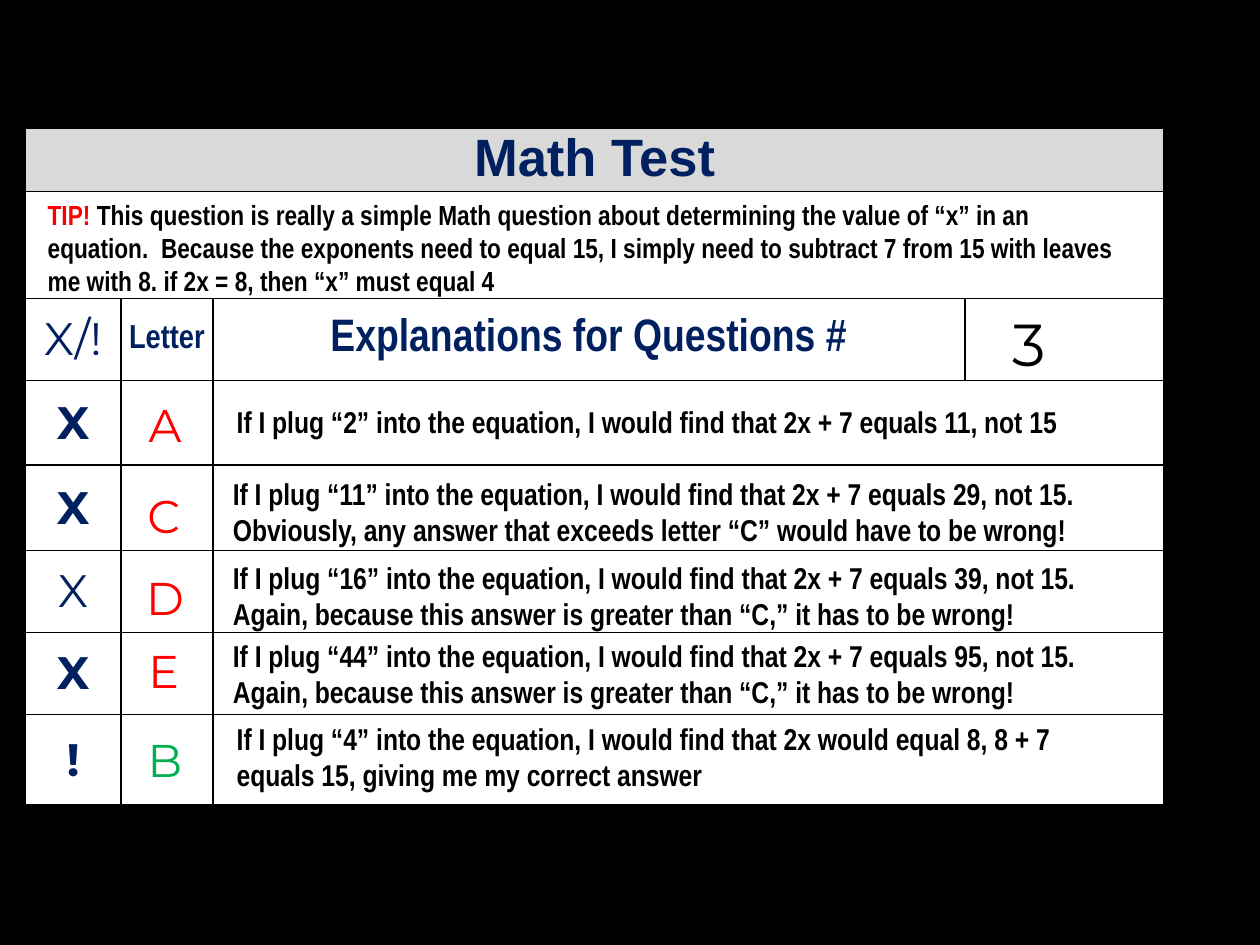
from lxml import etree
from pptx import Presentation
from pptx import util as u
from pptx.dml.color import RGBColor
from pptx.enum import text
from pptx.oxml.ns import qn

NAVY, RED, GREEN, BLACK, WHITE = "002060", "FF0000", "00B050", "000000", "FFFFFF"
CENTER = text.PP_ALIGN.CENTER


def paint(target, color):
    """Colour a fill or a font."""
    if hasattr(target, "solid"):
        target.solid()
        target.fore_color.rgb = RGBColor.from_string(color)
    else:
        target.color.rgb = RGBColor.from_string(color)


def add_text(left, top, width, height, spans, size, font, bold=False, align=None):
    """Add a wrapped text box; spans is a list of (words, color)."""
    box = page.shapes.add_textbox(*map(u.Inches, (left, top, width, height)))
    frame = box.text_frame
    frame.word_wrap = True
    frame.auto_size = text.MSO_AUTO_SIZE.SHAPE_TO_FIT_TEXT
    para = frame.paragraphs[0]
    para.alignment = align
    para.font.size, para.font.name, para.font.bold = u.Pt(size), font, bold
    for words, color in spans:
        span = para.add_run()
        span.text = words
        paint(span.font, color)


deck = Presentation()
deck.slide_width, deck.slide_height = u.Inches(10), u.Inches(7.5)
page = deck.slides.add_slide(deck.slide_layouts[6])
paint(page.background.fill, BLACK)

# Table grid
columns = [0.76, 0.73, 5.97, 1.58]
rows = [0.5, 0.85, 0.65, 0.67, 0.68, 0.65, 0.65, 0.72, 0.11]
table = page.shapes.add_table(
    len(rows), len(columns), u.Inches(0.2), u.Inches(1.02),
    u.Inches(sum(columns)), u.Inches(sum(rows))).table
for column, width in zip(table.columns, columns):
    column.width = u.Inches(width)
for row, height in zip(table.rows, rows):
    row.height = u.Inches(height)

# Cell fills, margins and borders
for r in range(len(rows)):
    for c in range(len(columns)):
        cell = table.cell(r, c)
        cell.margin_left = cell.margin_right = u.Inches(0.06)
        cell.margin_top = cell.margin_bottom = 0
        if r > 0:
            cell.vertical_anchor = text.MSO_ANCHOR.MIDDLE
        props = cell._tc.get_or_add_tcPr()
        for side in ("a:lnL", "a:lnR", "a:lnT", "a:lnB"):
            line = etree.SubElement(props, qn(side), w=str(u.Pt(1)))
            solid = etree.SubElement(line, qn("a:solidFill"))
            etree.SubElement(solid, qn("a:srgbClr"), val=BLACK)
        paint(cell.fill, {0: "D9D9D9", 8: BLACK}.get(r, WHITE))

# Merged cells: full-width rows, then the explanation cells
for r in (0, 1, 8):
    table.cell(r, 0).merge(table.cell(r, 3))
for r in range(3, 8):
    table.cell(r, 2).merge(table.cell(r, 3))

# Cell text: row, column, words, size, font, bold
labels = [
    (0, 0, "Math Test", 30, "Arial", True),
    (2, 0, "X/!", 26, "Montserrat", False),
    (2, 1, "Letter", 19, "Arial Narrow", True),
    (2, 2, "Explanations for Questions #", 26, "Arial Narrow", True),
]
for r, mark in enumerate("XXXX!", 3):
    labels.append((r, 0, mark, 26, "Montserrat", r != 5))
for r, c, words, size, font, bold in labels:
    cell = table.cell(r, c)
    cell.text = words
    para = cell.text_frame.paragraphs[0]
    para.alignment = CENTER
    para.font.size, para.font.name, para.font.bold = u.Pt(size), font, bold
    paint(para.font, NAVY)

# Keep the thin last row from growing
for cell in table.rows[8].cells:
    etree.SubElement(cell.text_frame.paragraphs[0]._p, qn("a:endParaRPr"), sz="400")

# Answer letters
for letter, left, top, color in [
    ("A", 1.03, 3.1, RED),
    ("C", 1.02, 3.82, RED),
    ("D", 1.03, 4.47, RED),
    ("E", 1.02, 5.05, RED),
    ("B", 1.03, 5.76, GREEN),
]:
    add_text(left, top, 0.56, 0.54, [(letter, color)], 26.2, "Montserrat", align=CENTER)

# Tip and question number
tip = ("This question is really a simple Math question about determining the value "
       "of “x” in an equation.  Because the exponents need to equal 15, I simply need "
       "to subtract 7 from 15 with leaves me with 8. if 2x = 8, then “x” must equal 4")
add_text(0.28, 1.52, 8.81, 0.9, [("TIP! ", RED), (tip, BLACK)], 15.8, "Arial Narrow", True)
add_text(7.94, 2.39, 0.96, 0.67, [("3", BLACK)], 33.8, "Montserrat")

# Explanations
too_big = "Again, because this answer is greater than “C,” it has to be wrong!"
for left, top, width, height, value, result in [
    (1.78, 3.15, 7.31, 0.39, 2, "2x + 7 equals 11, not 15"),
    (1.75, 3.72, 7.27, 0.68, 11, "2x + 7 equals 29, not 15.  Obviously, any answer "
     "that exceeds letter “C” would have to be wrong!"),
    (1.75, 4.39, 7.31, 0.68, 16, f"2x + 7 equals 39, not 15. {too_big}"),
    (1.75, 5.01, 7.31, 0.68, 44, f"2x + 7 equals 95, not 15. {too_big}"),
    (1.78, 5.67, 7.31, 0.68, 4, "2x would equal 8, 8 + 7 equals 15, "
     "giving me my correct answer"),
]:
    words = f"If I plug “{value}” into the equation, I would find that {result}"
    add_text(left, top, width, height, [(words, BLACK)], 17.2, "Arial Narrow", True)

deck.save("out.pptx")
